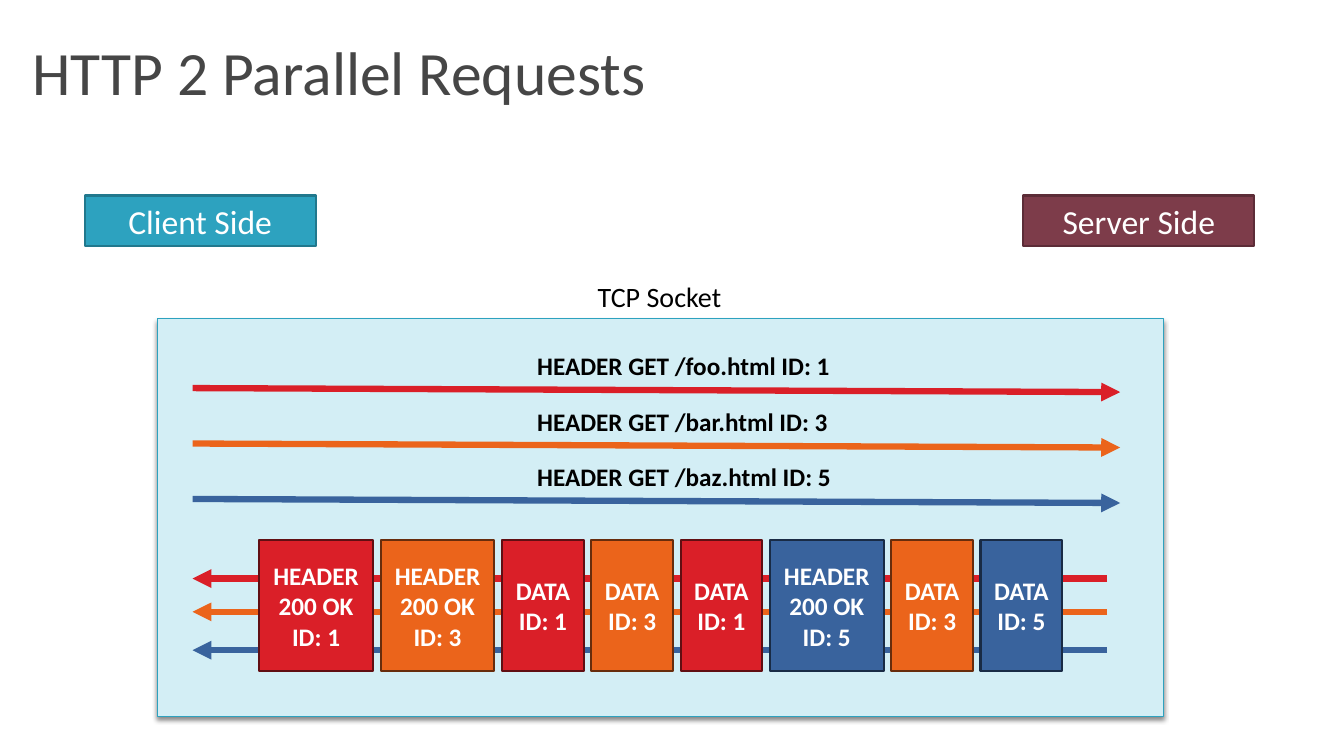
from lxml.etree import SubElement
from pptx import Presentation
from pptx.dml.color import RGBColor
from pptx.enum.shapes import MSO_CONNECTOR, MSO_SHAPE
from pptx.enum.text import MSO_ANCHOR, MSO_AUTO_SIZE, PP_ALIGN
from pptx.oxml import parse_xml
from pptx.oxml.ns import nsdecls, qn
from pptx.util import Inches, Pt

WHITE = RGBColor(0xFF, 0xFF, 0xFF)
BLACK = RGBColor(0x00, 0x00, 0x00)
TITLE_GRAY = RGBColor(0x46, 0x46, 0x46)
TEAL = RGBColor(0x2D, 0xA2, 0xBF)
DARK_TEAL = RGBColor(0x21, 0x78, 0x8D)
PALE_TEAL = RGBColor(0xD3, 0xEE, 0xF5)
PLUM = RGBColor(0x7D, 0x3C, 0x4A)
DARK_PLUM = RGBColor(0x5C, 0x2C, 0x37)
RED = RGBColor(0xDA, 0x1F, 0x28)
DARK_RED = RGBColor(0x60, 0x0E, 0x12)
ORANGE = RGBColor(0xEB, 0x64, 0x1B)
DARK_ORANGE = RGBColor(0x67, 0x2C, 0x0C)
BLUE = RGBColor(0x39, 0x63, 0x9D)
DARK_BLUE = RGBColor(0x19, 0x2B, 0x45)

# Stream ID: request file, fill, outline, height of the response arrow
STREAMS = {
    1: ("foo", RED, DARK_RED, 5.74),
    3: ("bar", ORANGE, DARK_ORANGE, 6.07),
    5: ("baz", BLUE, DARK_BLUE, 6.45),
}
FRAMES = [("HEADER", 1), ("HEADER", 3), ("DATA", 1), ("DATA", 3),
          ("DATA", 1), ("HEADER", 5), ("DATA", 3), ("DATA", 5)]
FRAME_WIDTHS = {"HEADER": 1.13, "DATA": 0.81}
FRAME_GAP = 0.075
ARROW_LEFT = 1.91
REQUEST_PITCH = 0.55

deck = Presentation()
deck.slide_width, deck.slide_height = Inches(13.33), Inches(7.5)
slide = deck.slides.add_slide(deck.slide_layouts[6])


def add_box(place, lines=(), size=18, color=BLACK, bold=False, fill=None, outline=None, weight=1.5):
    """Add a filled, centred rectangle, or a plain left-aligned text box if fill is None."""
    place = [Inches(length) for length in place]
    if fill is None:
        box = slide.shapes.add_textbox(*place)
    else:
        box = slide.shapes.add_shape(MSO_SHAPE.RECTANGLE, *place)
        box.shadow.inherit = False
        box.fill.solid()
        box.fill.fore_color.rgb = fill
        box.line.color.rgb = outline
        box.line.width = Pt(weight)
        box.text_frame.vertical_anchor = MSO_ANCHOR.MIDDLE
    frame = box.text_frame
    frame.word_wrap = fill is not None
    for index, line in enumerate(lines):
        para = frame.add_paragraph() if index else frame.paragraphs[0]
        para.alignment = PP_ALIGN.LEFT if fill is None else PP_ALIGN.CENTER
        span = para.add_run()
        span.text = line
        span.font.name = "Calibri"
        span.font.size = Pt(size)
        span.font.bold = bold
        span.font.color.rgb = color
    return box


def add_arrow(start, end, color):
    points = [Inches(length) for length in (*start, *end)]
    arrow = slide.shapes.add_connector(MSO_CONNECTOR.STRAIGHT, *points)
    arrow.line.color.rgb = color
    arrow.line.width = Pt(4.5)
    SubElement(arrow.line._get_or_add_ln(), qn("a:tailEnd"), type="triangle")
    SubElement(arrow._element.spPr, qn("a:effectLst"))


# Socket with its soft shadow
socket = add_box((1.56, 3.16, 9.98, 3.95), fill=PALE_TEAL, outline=TEAL, weight=0.79)
socket_effects = socket._element.spPr.find(qn("a:effectLst"))
socket_effects.append(parse_xml(
    f'<a:outerShdw {nsdecls("a")} blurRad="{Pt(3)}" dist="{Pt(2.4)}" dir="5400000" rotWithShape="0">'
    '<a:srgbClr val="000000"><a:alpha val="45000"/></a:srgbClr></a:outerShdw>'))
socket_label = add_box((5.83, 2.72, 1.43, 0.44), ["TCP Socket"], size=20)
socket_label.text_frame.auto_size = MSO_AUTO_SIZE.SHAPE_TO_FIT_TEXT

# Title and the two ends
title = add_box((0.22, 0.25, 12.89, 1.08), ["HTTP 2 Parallel Requests"], size=44, color=TITLE_GRAY)
title.text_frame.word_wrap = True
title.text_frame.margin_top = Inches(0.09)
for left, name, fill, outline in ((0.84, "Client Side", TEAL, DARK_TEAL),
                                  (10.15, "Server Side", PLUM, DARK_PLUM)):
    add_box((left, 1.94, 2.29, 0.5), [name], size=24, color=WHITE, fill=fill, outline=outline)

# Requests to the right, responses to the left
for row, (stream, (file, color, outline, response_y)) in enumerate(STREAMS.items()):
    request_y = 3.85 + row * REQUEST_PITCH
    add_arrow((ARROW_LEFT, request_y), (11.11, request_y + 0.04), color)
    label = add_box((5.23, request_y - 0.42, 3.14, 0.4),
                    [f"HEADER GET /{file}.html ID: {stream}"], bold=True)
    label.text_frame.auto_size = MSO_AUTO_SIZE.SHAPE_TO_FIT_TEXT
    add_arrow((10.98, response_y), (ARROW_LEFT, response_y), color)

# Interleaved response frames
left = 2.57
for kind, stream in FRAMES:
    file, color, outline, response_y = STREAMS[stream]
    status = ["200 OK"] if kind == "HEADER" else []
    add_box((left, 5.36, FRAME_WIDTHS[kind], 1.3), [kind, *status, f"ID: {stream}"],
            color=WHITE, bold=True, fill=color, outline=outline).text_frame.word_wrap = False
    left += FRAME_WIDTHS[kind] + FRAME_GAP

deck.save("out.pptx")
